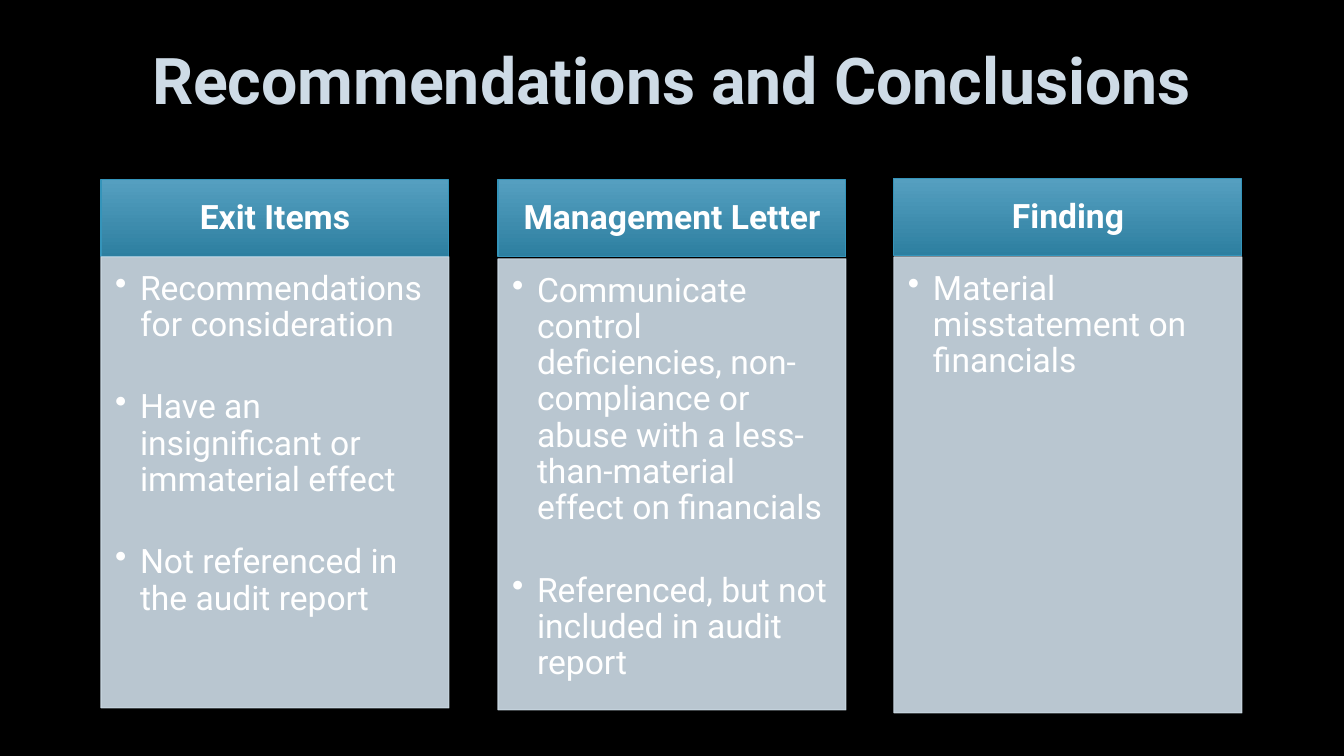
from pptx import Presentation, util as u
from pptx.dml.color import RGBColor
from pptx.enum import shapes, text
from pptx.oxml.ns import qn
from lxml import etree


def px(n):
    return u.Emu(round(n * 914400 / 100.8))


def hue(code):
    return RGBColor.from_string(code)


deck = Presentation()
deck.slide_width, deck.slide_height = px(1344), px(756)
slide = deck.slides.add_slide(deck.slide_layouts[6])
slide.background.fill.solid()
slide.background.fill.fore_color.rgb = hue("000000")

title = slide.shapes.add_textbox(px(101), px(12), px(1141), px(143))
frame = title.text_frame
frame.word_wrap = True
frame.vertical_anchor = text.MSO_ANCHOR.MIDDLE
para = frame.paragraphs[0]
para.text = "Recommendations and Conclusions"
para.alignment = text.PP_ALIGN.CENTER
para.line_spacing = 0.9
para.font.name = "Roboto"
para.font.size = u.Pt(46)
para.font.bold = True
para.font.color.rgb = hue("CEDBE6")

cards = [
    ("Exit Items", 101, 180, 257, 451, [
        "Recommendations for consideration",
        "Have an insignificant or immaterial effect",
        "Not referenced in the audit report"]),
    ("Management Letter", 498, 180, 259, 451, [
        "Communicate control deficiencies, non-compliance or abuse "
        "with a less- than-material effect on financials",
        "Referenced, but not included in audit report"]),
    ("Finding", 894, 179, 257, 456, [
        "Material misstatement on financials"]),
]

for name, left, top, low, high, items in cards:
    head = slide.shapes.add_shape(
        shapes.MSO_SHAPE.RECTANGLE, px(left), px(top), px(348), px(77))
    head.fill.gradient()
    head.fill.gradient_angle = 270
    for stop, code in zip(head.fill.gradient_stops, ("559FC0", "2D7FA0")):
        stop.color.rgb = hue(code)
    head.line.color.rgb = hue("3494BA")

    body = slide.shapes.add_shape(
        shapes.MSO_SHAPE.RECTANGLE, px(left), px(low), px(348), px(high))
    body.fill.solid()
    body.fill.fore_color.rgb = hue("CEDCE7")
    body.line.color.rgb = hue("CEDCE7")
    for tint in body._element.spPr.iter(qn("a:srgbClr")):
        etree.SubElement(tint, qn("a:alpha")).set("val", "90000")

    for box, lines, pads, anchor, align in (
        (head, [name], (19, 11, 19, 11),
         text.MSO_ANCHOR.MIDDLE, text.PP_ALIGN.CENTER),
        (body, items, (14, 14, 19, 21),
         text.MSO_ANCHOR.TOP, text.PP_ALIGN.LEFT),
    ):
        box.shadow.inherit = False
        box.line.width = u.Pt(0.75)
        frame = box.text_frame
        frame.word_wrap = True
        frame.vertical_anchor = anchor
        (frame.margin_left, frame.margin_top,
         frame.margin_right, frame.margin_bottom) = map(px, pads)
        for i, line in enumerate(lines):
            para = frame.paragraphs[0] if i == 0 else frame.add_paragraph()
            para.text = line
            para.alignment = align
            para.line_spacing = 0.9
            if i:
                para.space_before = u.Pt(33)
            if box is body:
                props = para._p.get_or_add_pPr()
                props.set("marL", str(px(25)))
                props.set("indent", str(-px(25)))
                etree.SubElement(props, qn("a:buChar")).set("char", "•")
            para.font.name = "Roboto"
            para.font.size = u.Pt(24)
            para.font.bold = box is head
            para.font.color.rgb = hue("FFFFFF")

deck.save("out.pptx")
